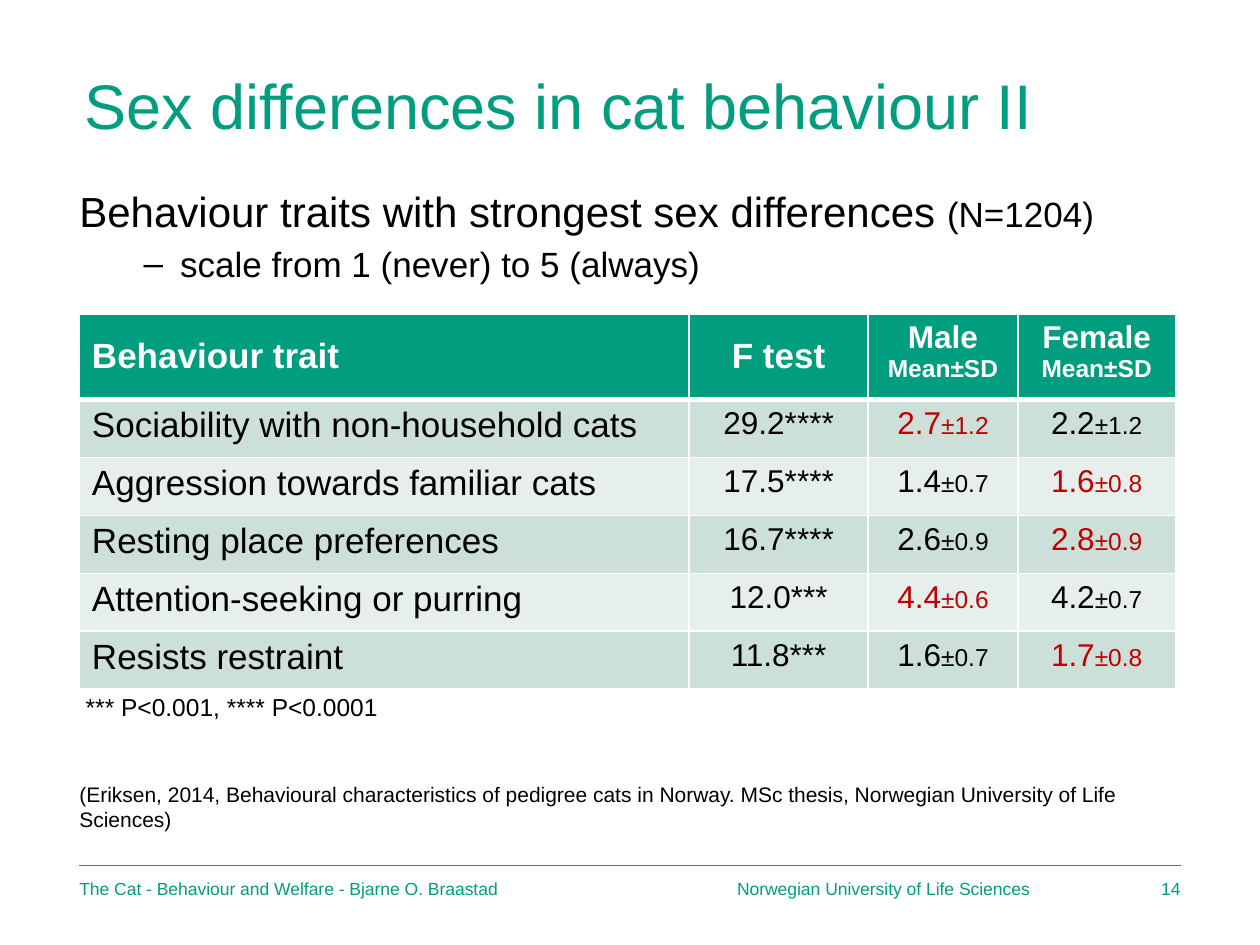
from lxml import etree
from pptx import Presentation
from pptx.dml.color import RGBColor
from pptx.enum.shapes import MSO_CONNECTOR
from pptx.enum.text import MSO_ANCHOR, MSO_AUTO_SIZE, PP_ALIGN
from pptx.oxml.ns import qn
from pptx.util import Inches, Pt

LEFT, MID, RIGHT = PP_ALIGN.LEFT, PP_ALIGN.CENTER, PP_ALIGN.RIGHT
TOP, CENTER, BOTTOM = MSO_ANCHOR.TOP, MSO_ANCHOR.MIDDLE, MSO_ANCHOR.BOTTOM
FIXED = MSO_AUTO_SIZE.NONE
LINE = MSO_CONNECTOR.STRAIGHT

FONT = "Arial"
COLORS = {"green": "009D7F", "black": "000000", "white": "FFFFFF",
          "red": "C00000", "dark": "CCDFD8", "light": "E7EFEC"}
WIDTH, HEIGHT = 10, 7.5
EDGE, SPAN = 0.63, 8.74

# Trait, F test, male mean and SD, female mean and SD
TRAITS = [
    ("Sociability with non-household cats", "29.2****", 2.7, 1.2, 2.2, 1.2),
    ("Aggression towards familiar cats", "17.5****", 1.4, 0.7, 1.6, 0.8),
    ("Resting place preferences", "16.7****", 2.6, 0.9, 2.8, 0.9),
    ("Attention-seeking or purring", "12.0***", 4.4, 0.6, 4.2, 0.7),
    ("Resists restraint", "11.8***", 1.6, 0.7, 1.7, 0.8),
]


def color(name):
    return RGBColor.from_string(COLORS[name])


def style(font, size, hue="black", bold=False):
    font.name, font.size, font.bold = FONT, Pt(size), bold
    font.color.rgb = color(hue)


def write(para, parts, hue="black", bold=False, align=LEFT):
    """Fill a paragraph with runs given as (text, size) pairs."""
    para.alignment = align
    for text, size in parts:
        run = para.add_run()
        run.text = text
        style(run.font, size, hue, bold)


def place(shape, box, anchor):
    """Move a text shape to its box and clear its insets."""
    shape.left, shape.top, shape.width, shape.height = map(Inches, box)
    frame = shape.text_frame
    frame.word_wrap, frame.auto_size = True, FIXED
    frame.vertical_anchor = anchor
    frame.margin_left = frame.margin_right = 0
    frame.margin_top = frame.margin_bottom = 0
    return frame


def indent(para, margin, hang=0, mark=None):
    """Set the left margin and the bullet of a paragraph."""
    props = para._p.get_or_add_pPr()
    props.set("marL", str(Inches(margin)))
    props.set("indent", str(-Inches(hang)))
    bullet = etree.SubElement(props, qn("a:buChar" if mark else "a:buNone"))
    if mark:
        bullet.set("char", mark)


def border(cell, foot=1):
    """Draw white cell borders, with the given width at the foot."""
    props = cell._tc.get_or_add_tcPr()
    for spot, side in enumerate("LRTB"):
        line = etree.Element(qn(f"a:ln{side}"))
        line.set("w", str(Pt(foot if side == "B" else 1)))
        fill = etree.SubElement(line, qn("a:solidFill"))
        etree.SubElement(fill, qn("a:srgbClr")).set("val", COLORS["white"])
        props.insert(spot, line)


def add_title(slide, box):
    frame = place(slide.shapes.title, box, BOTTOM)
    write(frame.paragraphs[0], [("Sex differences in cat behaviour II", 36)], "green")


def add_body(slide, box):
    frame = place(slide.placeholders[1], box, TOP)
    # Parts, space before, level, then margin, hang and bullet
    rows = [
        ([("Behaviour traits with strongest sex differences ", 24), ("(N=1204)", 20)],
         0, 0, (0,)),
        ([("scale from 1 (never) to 5 (always)", 20)], 4, 1, (0.8, 0.29, "–")),
        ([("*** P<0.001, **** P<0.0001", 14)], 233, 0, (0.05,)),
        ([("(Eriksen, 2014, Behavioural characteristics of pedigree cats in Norway. "
           "MSc thesis, Norwegian University of Life Sciences)", 12)], 34, 0, (0,)),
    ]
    for num, (parts, gap, level, dent) in enumerate(rows):
        para = frame.add_paragraph() if num else frame.paragraphs[0]
        para.level, para.space_before = level, Pt(gap)
        indent(para, *dent)
        write(para, parts, align=LEFT)


def fill_cell(cell, lines, back, hue="black", bold=False, align=MID, anchor=TOP, foot=1):
    cell.fill.solid()
    cell.fill.fore_color.rgb = color(back)
    cell.vertical_anchor = anchor
    border(cell, foot)
    frame = cell.text_frame
    for num, parts in enumerate(lines):
        para = frame.add_paragraph() if num else frame.paragraphs[0]
        write(para, parts, hue, bold, align)


def add_traits(slide, box):
    cols, head, step = (4.84, 1.42, 1.19, 1.25), 0.68, 0.46
    grid = slide.shapes.add_table(len(TRAITS) + 1, len(cols), *map(Inches, box)).table
    for col, wide in zip(grid.columns, cols):
        col.width = Inches(wide)
    for num, row in enumerate(grid.rows):
        row.height = Inches(step if num else head)

    # Header row
    heads = [[[("Behaviour trait", 20)]], [[("F test", 20)]]]
    heads += [[[(sex, 18)], [("Mean±SD", 14)]] for sex in ("Male", "Female")]
    for num, lines in enumerate(heads):
        fill_cell(grid.cell(0, num), lines, "green", "white", True,
                  MID if num else LEFT, CENTER if num < 2 else TOP, foot=3)

    # Trait rows, with the higher mean in red
    for num, (trait, test, male, msd, female, fsd) in enumerate(TRAITS, 1):
        back = "dark" if num % 2 else "light"
        fill_cell(grid.cell(num, 0), [[(trait, 20)]], back, align=LEFT)
        fill_cell(grid.cell(num, 1), [[(test, 18)]], back)
        for col, (mean, dev) in enumerate([(male, msd), (female, fsd)], 2):
            hue = "red" if mean == max(male, female) else "black"
            parts = [(f"{mean:.1f}", 18), (f"±{dev:.1f}", 14)]
            fill_cell(grid.cell(num, col), [[*parts]], back, hue)


def add_footer(slide, box):
    left, top, wide, high = box
    # Rule above the footer
    rule = slide.shapes.add_connector(
        LINE, *map(Inches, (left, top, left + wide, top)))
    rule.line.color.rgb = color("green")
    rule.line.width = Pt(1)
    etree.SubElement(rule._element.spPr, qn("a:effectLst"))
    # Talk, school and page number
    items = [("The Cat - Behaviour and Welfare - Bjarne O. Braastad", 0, 5.2, LEFT),
             ("Norwegian University of Life Sciences", 5.22, 3.16, LEFT),
             ("14", wide - 0.33, 0.33, RIGHT)]
    for text, shift, span, align in items:
        spot = (left + shift, top + 0.1, span, high - 0.1)
        note = slide.shapes.add_textbox(*map(Inches, spot))
        frame = place(note, spot, CENTER)
        write(frame.paragraphs[0], [(text, 10)], "green", align=align)


def main():
    deck = Presentation()
    deck.slide_width, deck.slide_height = Inches(WIDTH), Inches(HEIGHT)
    slide = deck.slides.add_slide(deck.slide_layouts[1])
    add_title(slide, (0.67, 0.52, 7.87, 0.61))
    add_body(slide, (EDGE, 1.47, SPAN, 5.43))
    add_traits(slide, (EDGE, 2.49, 8.7, 2.98))
    add_footer(slide, (EDGE, 6.87, SPAN, 0.27))
    deck.save("out.pptx")


if __name__ == "__main__":
    main()
